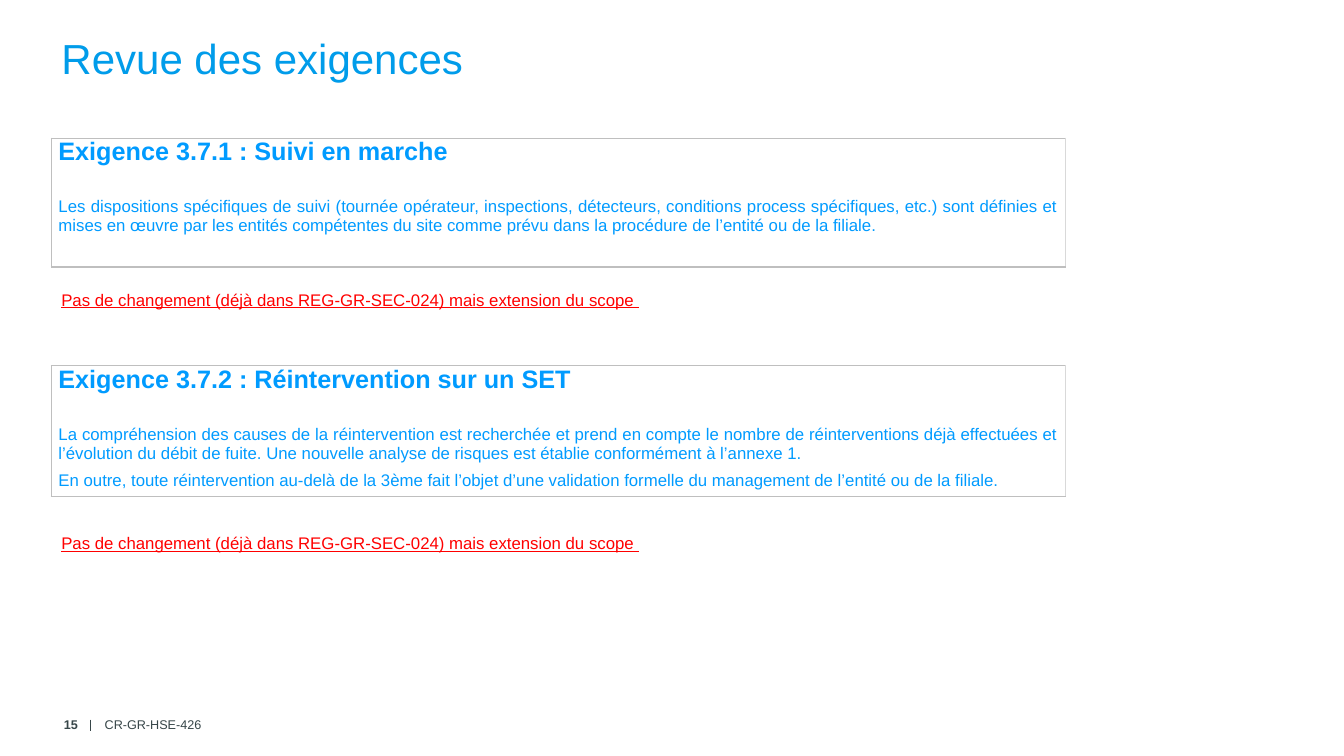
from lxml.etree import SubElement as Sub
from pptx import Presentation
from pptx.dml.color import RGBColor
from pptx.enum.shapes import MSO_CONNECTOR as Link
from pptx.enum.text import MSO_ANCHOR as Anchor, PP_ALIGN as Align
from pptx.oxml.ns import qn
from pptx.util import Inches as In, Pt

TITLE = "Revue des exigences"
NOTE = "Pas de changement (déjà dans REG-GR-SEC-024) mais extension du scope "
RULES = [
    (1.37, (0.59, 0.46, 0.23), 2.82, "Exigence 3.7.1 : Suivi en marche", [
        "Les dispositions spécifiques de suivi (tournée opérateur, inspections, "
        "détecteurs, conditions process spécifiques, etc.) sont définies et mises "
        "en œuvre par les entités compétentes du site comme prévu dans la procédure "
        "de l’entité ou de la filiale."]),
    (3.63, (0.59, 0.65, 0.02), 5.24, "Exigence 3.7.2 : Réintervention sur un SET", [
        "La compréhension des causes de la réintervention est recherchée et prend en "
        "compte le nombre de réinterventions déjà effectuées et l’évolution du débit "
        "de fuite. Une nouvelle analyse de risques est établie conformément à "
        "l’annexe 1.",
        "En outre, toute réintervention au-delà de la 3ème fait l’objet d’une "
        "validation formelle du management de l’entité ou de la filiale."]),
]
FOOT = [("15", 0.24, 0.63, Align.RIGHT, True),
        ("CR-GR-HSE-426", 0.94, 3.94, Align.LEFT, False)]
LEFT, WIDE = 0.51, 10.06
BLUE, SKY, RED, INK = "009BFF", "009CEA", "FF0000", "374649"
GRAY, PALE = "BFBFBF", "D9D9D9"


def color(code):
    return RGBColor.from_string(code)


def write(frame, lines, size, code, bold=False, line=False, align=Align.LEFT, after=0):
    frame.word_wrap = True
    for i, text in enumerate(lines):
        para = frame.paragraphs[0] if i == 0 else frame.add_paragraph()
        para.alignment = align
        para.space_before, para.space_after = Pt(0), Pt(after)
        run = para.add_run()
        run.text = text
        font = run.font
        font.name, font.size, font.bold = "Arial", Pt(size), bold
        font.underline = line
        font.color.rgb = color(code)


def add_text(left, top, wide, high, lines, *style, anchor=Anchor.TOP, **more):
    frame = slide.shapes.add_textbox(In(left), In(top), In(wide), In(high)).text_frame
    frame.vertical_anchor = anchor
    write(frame, lines, *style, **more)


def edge(cell, sides):
    props = cell._tc.get_or_add_tcPr()
    for side in "LRTB":
        ln = Sub(props, qn("a:ln" + side), w=str(Pt(1)))
        if side in sides:
            fill = Sub(ln, qn("a:solidFill"))
            Sub(fill, qn("a:srgbClr"), val=sides[side])
        else:
            Sub(ln, qn("a:noFill"))


def add_rule(top, rows, head, body):
    table = slide.shapes.add_table(
        len(rows), 1, In(LEFT), In(top), In(WIDE), In(sum(rows))).table
    table.first_row = table.horz_banding = False
    for i, high in enumerate(rows):
        table.rows[i].height = In(high)
        cell = table.cell(i, 0)
        cell.margin_left = cell.margin_right = In(0.07)
        cell.margin_top = cell.margin_bottom = 0
        sides = {"L": GRAY, "R": PALE}
        if i == 0:
            sides["T"] = GRAY
        if i == len(rows) - 1:
            sides["B"] = GRAY
        edge(cell, sides)
        cell.fill.background()
    write(table.cell(0, 0).text_frame, [head], 18, BLUE, True,
          align=Align.JUSTIFY, after=3)
    write(table.cell(1, 0).text_frame, body, 12, BLUE, align=Align.JUSTIFY, after=6)
    table.cell(2, 0).text_frame.paragraphs[0].font.size = Pt(1)


deck = Presentation()
deck.slide_width, deck.slide_height = In(13.33), In(7.5)
slide = deck.slides.add_slide(deck.slide_layouts[5])

title = slide.shapes.title
title.left, title.top, title.width, title.height = In(LEFT), In(0.27), In(10.63), In(1.1)
title.text_frame.vertical_anchor = Anchor.TOP
write(title.text_frame, [TITLE], 30, SKY)

for top, rows, below, head, body in RULES:
    add_rule(top, rows, head, body)
    add_text(LEFT, below, WIDE, 0.55, [NOTE], 12, RED, line=True, after=3)

for text, left, wide, align, bold in FOOT:
    add_text(left, 7.05, wide, 0.28, [text], 9, INK, bold,
             align=align, anchor=Anchor.MIDDLE)

bar = slide.shapes.add_connector(Link.STRAIGHT, In(0.9), In(7.14), In(0.9), In(7.25))
bar.line.color.rgb = color(INK)
bar.line.width = Pt(1)
Sub(bar._element.spPr, qn("a:effectLst"))

deck.save("out.pptx")
